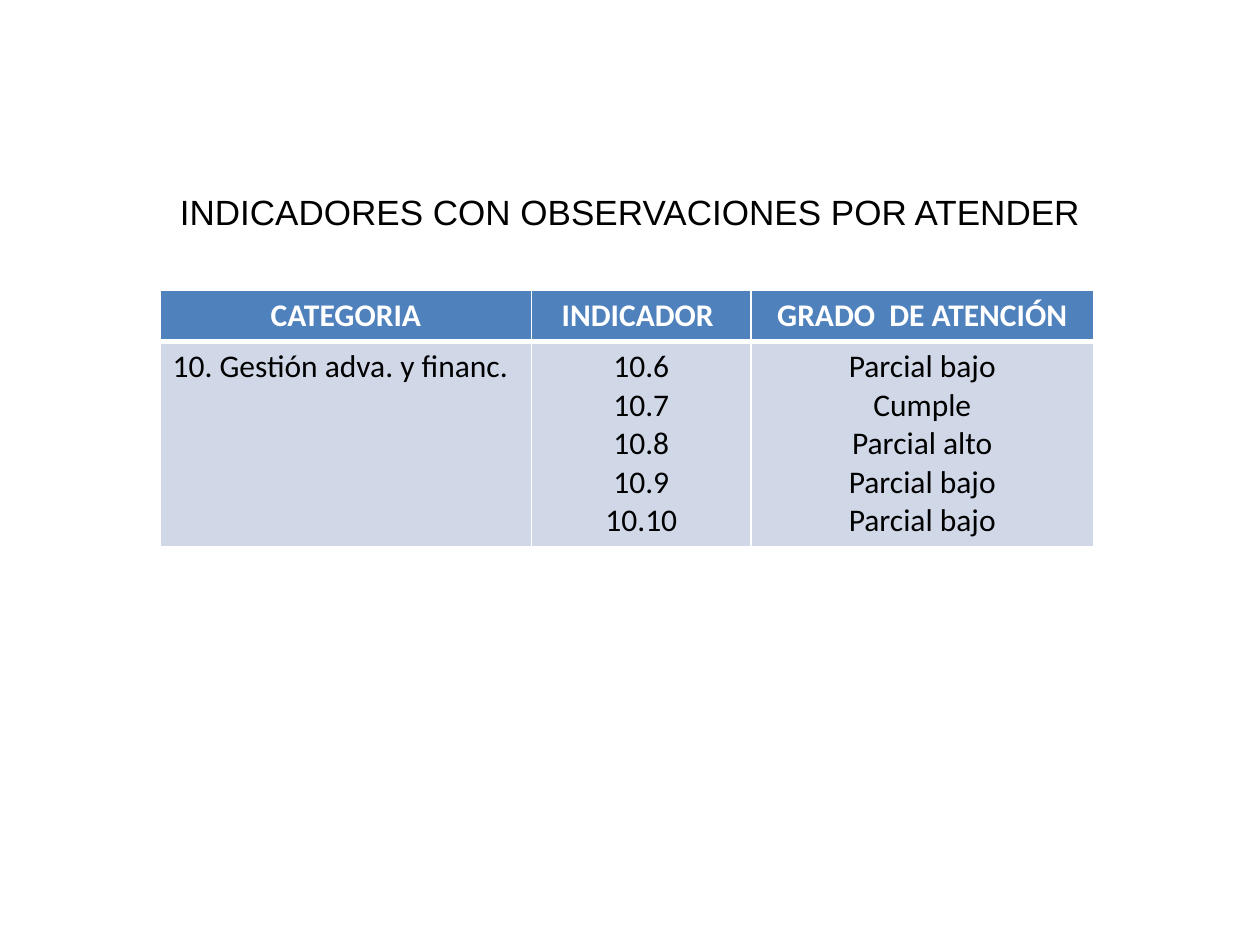
from dataclasses import dataclass

from lxml import etree
from pptx import Presentation
from pptx.dml.color import RGBColor
from pptx.enum.text import MSO_AUTO_SIZE, PP_ALIGN
from pptx.oxml.ns import qn
from pptx.util import Inches, Pt

LEFT, CENTER = PP_ALIGN.LEFT, PP_ALIGN.CENTER
FIT_SHAPE = MSO_AUTO_SIZE.SHAPE_TO_FIT_TEXT
WHITE, BLACK, BLUE, PALE = "FFFFFF", "000000", "4F81BD", "D0D8E8"
ROW_HEIGHTS = (0.41, 1.6)


@dataclass
class Column:
    """A table column with its heading and its lines of text."""
    heading: str
    lines: list[str]
    width: float
    align: PP_ALIGN = CENTER


COLUMNS = [
    Column("CATEGORIA", ["10. Gestión adva. y financ."], 2.95, LEFT),
    Column("INDICADOR ", ["10.6", "10.7", "10.8", "10.9", "10.10"], 1.74),
    Column("GRADO  DE ATENCIÓN",
           ["Parcial bajo", "Cumple", "Parcial alto", "Parcial bajo", "Parcial bajo"], 2.72),
]


def rgb(value: str) -> RGBColor:
    """Turn a hex string into a colour."""
    return RGBColor.from_string(value)


def write(tf, text: str, align, font: str, size: float, color: str, bold: bool = False) -> None:
    """Fill a text frame and format all its runs."""
    tf.text = text
    for p in tf.paragraphs:
        p.alignment = align
        for r in p.runs:
            r.font.name, r.font.size, r.font.bold = font, Pt(size), bold
            r.font.color.rgb = rgb(color)


def set_borders(cell, top: float, bottom: float) -> None:
    """Draw white borders around a cell, with 1 pt sides."""
    tc_pr = cell._tc.get_or_add_tcPr()
    for side, width in (("L", 1), ("R", 1), ("T", top), ("B", bottom)):
        ln = etree.SubElement(tc_pr, qn(f"a:ln{side}"), w=str(Pt(width)))
        fill = etree.SubElement(ln, qn("a:solidFill"))
        etree.SubElement(fill, qn("a:srgbClr"), val=WHITE)


def style_cell(cell, text: str, align, header: bool) -> None:
    """Write one table cell with its borders and fill."""
    write(cell.text_frame, text, align, "Calibri", 18, WHITE if header else BLACK, header)
    set_borders(cell, 1 if header else 3, 3 if header else 1)
    cell.fill.solid()
    cell.fill.fore_color.rgb = rgb(BLUE if header else PALE)


def add_indicator_table(s) -> None:
    """Add the table of indicators and their degree of attention."""
    width = sum(column.width for column in COLUMNS)
    table = s.shapes.add_table(len(ROW_HEIGHTS), len(COLUMNS), Inches(1.27), Inches(2.3),
                               Inches(width), Inches(sum(ROW_HEIGHTS))).table
    for row, height in zip(table.rows, ROW_HEIGHTS):
        row.height = Inches(height)
    for i, column in enumerate(COLUMNS):
        table.columns[i].width = Inches(column.width)
        style_cell(table.cell(0, i), column.heading, CENTER, True)
        style_cell(table.cell(1, i), "\n".join(column.lines), column.align, False)


def add_title(s) -> None:
    """Add the centred heading across the slide."""
    sp = s.shapes.add_textbox(0, Inches(1.46), Inches(10), Inches(0.44))
    tf = sp.text_frame
    tf.word_wrap = True
    tf.auto_size = FIT_SHAPE
    write(tf, "INDICADORES CON OBSERVACIONES POR ATENDER", CENTER, "Arial", 20, BLACK)


def main() -> None:
    """Build and save the slide."""
    prs = Presentation()
    prs.slide_width, prs.slide_height = Inches(10), Inches(7.5)
    s = prs.slides.add_slide(prs.slide_layouts[6])
    add_indicator_table(s)
    add_title(s)
    prs.save("out.pptx")


if __name__ == "__main__":
    main()
